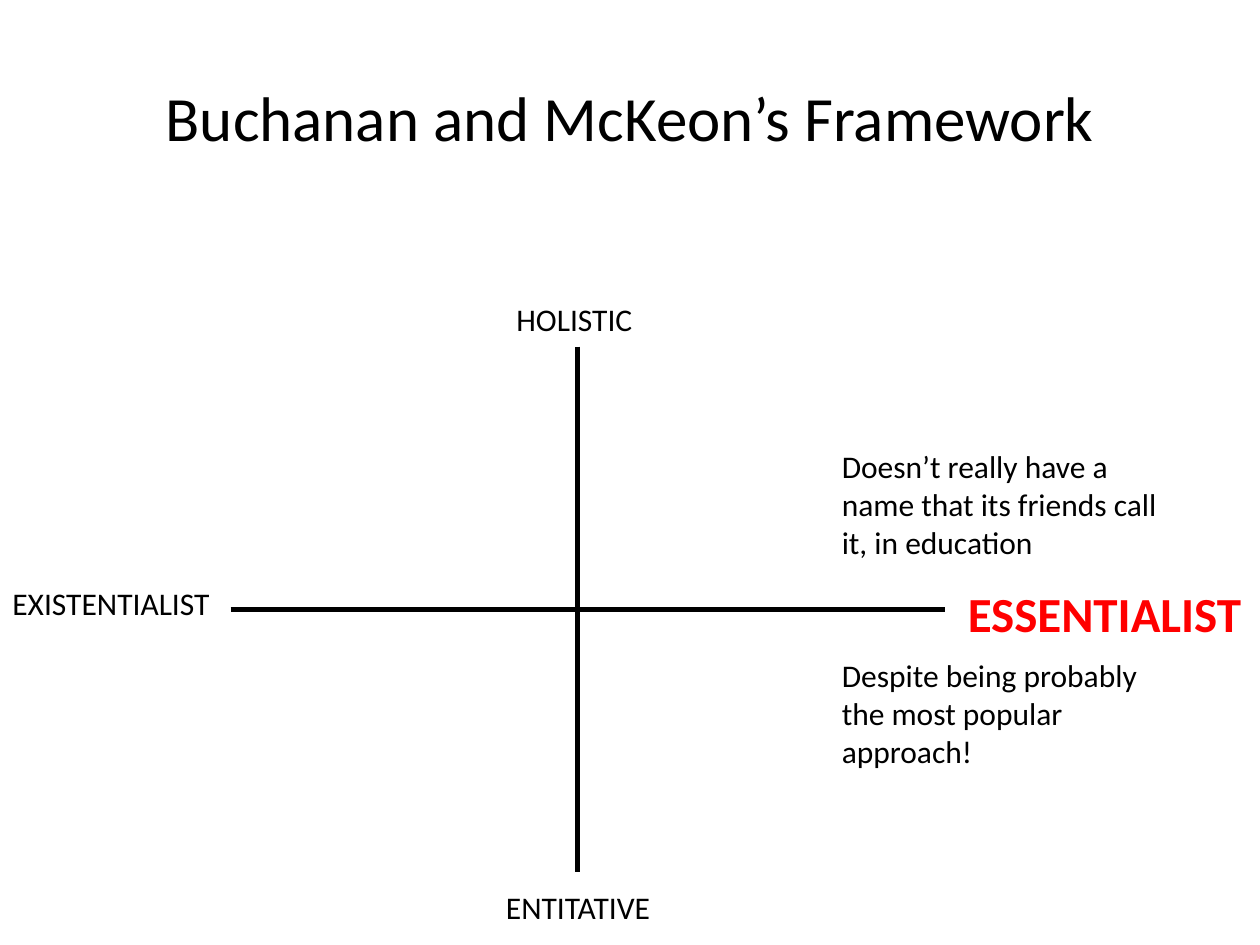
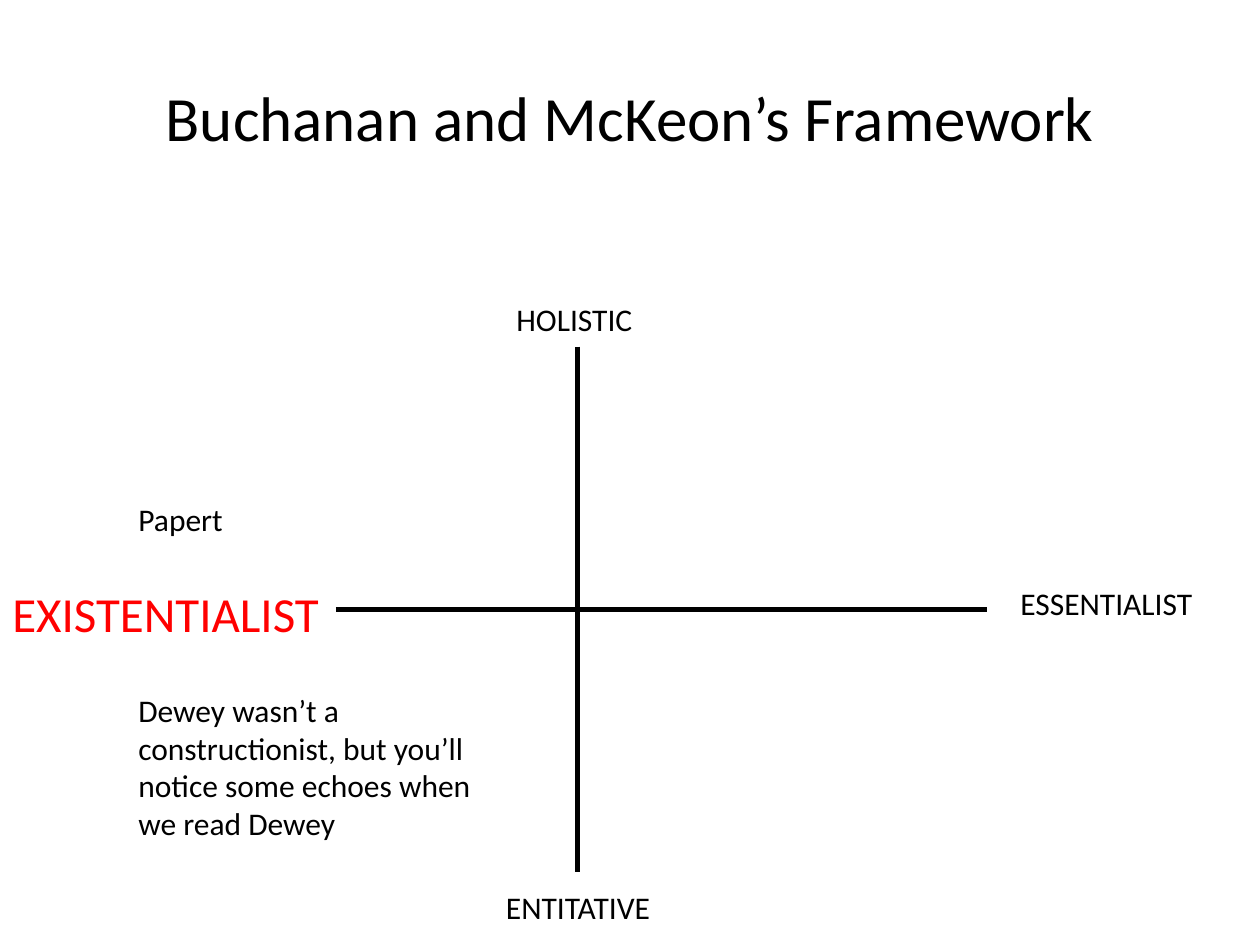
from lxml import etree
from pptx import Presentation
from pptx.dml.color import RGBColor
from pptx.enum.shapes import MSO_CONNECTOR
from pptx.enum.text import MSO_ANCHOR, MSO_AUTO_SIZE, PP_ALIGN
from pptx.oxml.ns import qn
from pptx.util import Cm, Pt

STRAIGHT = MSO_CONNECTOR.STRAIGHT
MIDDLE = MSO_ANCHOR.MIDDLE
CENTER = PP_ALIGN.CENTER
NO_FIT, GROW = MSO_AUTO_SIZE.NONE, MSO_AUTO_SIZE.SHAPE_TO_FIT_TEXT

FONT, BLACK, RED = "Calibri", "000000", "FF0000"
TITLE = "Buchanan and McKeon’s Framework"
PLAIN = dict(size=18, color=BLACK, bold=False)
RED_LABEL = dict(size=28, color=RED, bold=False)
RED_BOLD = dict(RED_LABEL, bold=True)

# Lengths are in centimetres; texts are (text, left, top, width, style).
SLIDE_W, SLIDE_H = 25.4, 19.05
CENTER_X, CENTER_Y = 11.64, 12.28
AXIS_TOP, AXIS_BOTTOM = 6.99, 17.57
LABEL_Y = 11.64
POLES = [
    ("ENTITATIVE", 9.95, 17.78, 3.6, PLAIN),
    ("HOLISTIC", 10.16, 5.93, 3.6, PLAIN),
]
SLIDES = [
    dict(axis=(4.65, 19.05), texts=[
        ("ESSENTIALIST", 19.26, LABEL_Y, 6.14, RED_BOLD),
        ("EXISTENTIALIST", 0, LABEL_Y, 5.08, PLAIN),
        ("Doesn’t really have a name that its friends call it, in education",
         16.72, 8.89, 6.99, PLAIN),
        ("Despite being probably the most popular approach!",
         16.72, 13.1, 6.99, PLAIN),
    ]),
    dict(axis=(6.77, 19.9), texts=[
        ("ESSENTIALIST", 20.32, LABEL_Y, 4.02, PLAIN),
        ("EXISTENTIALIST", 0, LABEL_Y, 6.99, RED_LABEL),
        ("Papert", 2.54, 9.95, 2.54, PLAIN),
        ("Dewey wasn’t a constructionist, but you’ll notice some echoes "
         "when we read Dewey", 2.54, 13.8, 7.83, PLAIN),
    ]),
]


def rgb(color):
    return RGBColor.from_string(color)


def set_font(p, size, color, bold):
    p.font.name, p.font.size, p.font.bold = FONT, Pt(size), bold
    p.font.color.rgb = rgb(color)


def add_title(s):
    sp = s.shapes.title
    sp.left, sp.top, sp.width, sp.height = 0, Cm(0.76), Cm(SLIDE_W), Cm(3.18)
    tf = sp.text_frame
    tf.text = TITLE
    tf.auto_size, tf.vertical_anchor = NO_FIT, MIDDLE
    p = tf.paragraphs[0]
    p.alignment = CENTER
    set_font(p, 36, BLACK, False)


def add_axis(s, x1, y1, x2, y2):
    line = s.shapes.add_connector(STRAIGHT, Cm(x1), Cm(y1), Cm(x2), Cm(y2))
    line.line.color.rgb = rgb(BLACK)
    line.line.width = Pt(3)
    etree.SubElement(line._element.spPr, qn("a:effectLst"))


def add_text(s, text, left, top, width, style):
    """Add a wrapped text box that starts one line high and grows to fit."""
    height = Pt(style["size"] * 1.2) + Cm(0.25)
    sp = s.shapes.add_textbox(Cm(left), Cm(top), Cm(width), height)
    tf = sp.text_frame
    tf.word_wrap, tf.auto_size = True, GROW
    tf.text = text
    set_font(tf.paragraphs[0], **style)


def main():
    prs = Presentation()
    prs.slide_width, prs.slide_height = Cm(SLIDE_W), Cm(SLIDE_H)
    title_only = prs.slide_layouts[5]
    for content in SLIDES:
        s = prs.slides.add_slide(title_only)
        add_title(s)
        axis_left, axis_right = content["axis"]
        add_axis(s, CENTER_X, AXIS_TOP, CENTER_X, AXIS_BOTTOM)
        add_axis(s, axis_left, CENTER_Y, axis_right, CENTER_Y)
        for item in POLES + content["texts"]:
            add_text(s, *item)
    prs.save("out.pptx")


if __name__ == "__main__":
    main()
